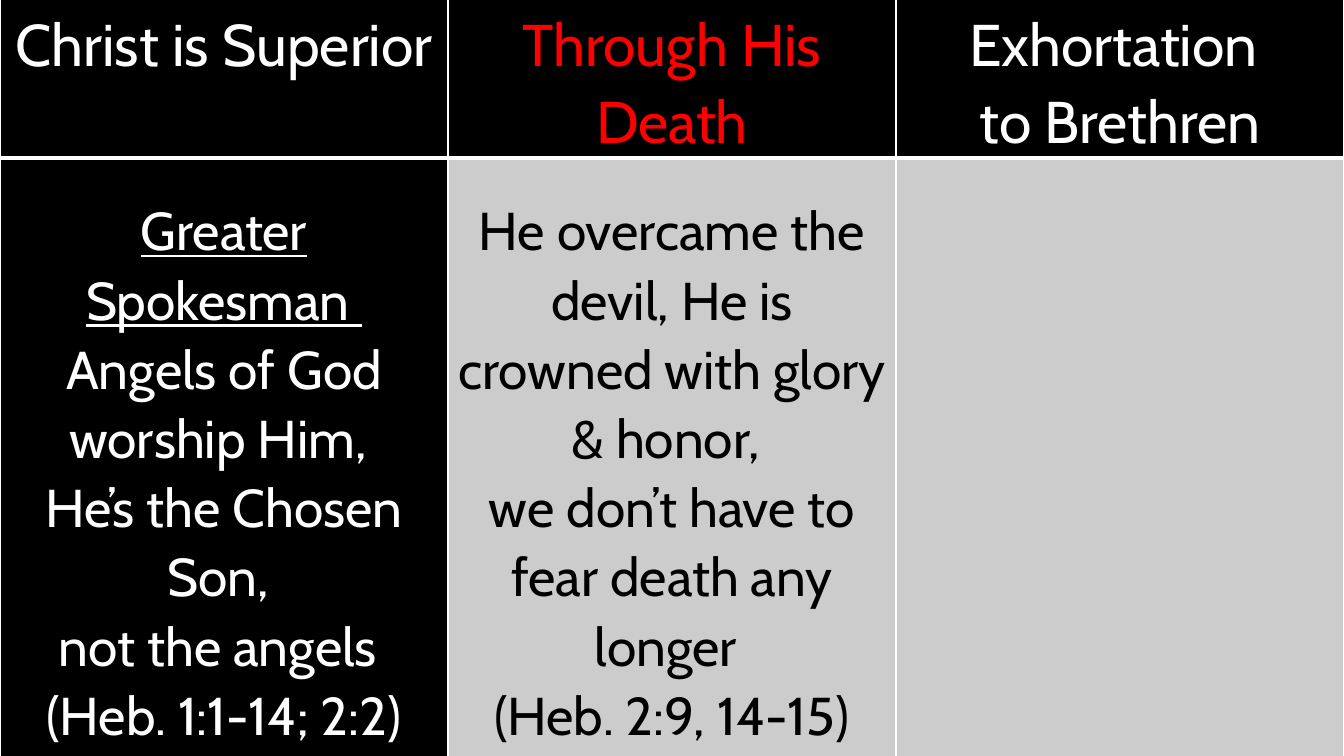
"""Build a three-column table slide on Christ's superiority in Hebrews."""
from lxml.etree import SubElement
from pptx import Presentation
from pptx.dml.color import RGBColor as RGB
from pptx.enum.text import PP_ALIGN as Align
from pptx.oxml.ns import qn
from pptx.util import Pt

BLACK, WHITE, RED, GREY = "000000", "FFFFFF", "FF0000", "CCCCCC"


def paint(fill, color):
    fill.solid()
    fill.fore_color.rgb = RGB.from_string(color)


def edge(cell, side, width):
    line = SubElement(cell._tc.get_or_add_tcPr(), qn("a:ln" + side), w=str(Pt(width)))
    solid = SubElement(line, qn("a:solidFill"))
    SubElement(solid, qn("a:srgbClr"), val=WHITE)


heads = [
    (["Christ is Superior"], WHITE, BLACK),
    (["Through His Death"], RED, BLACK),
    (["Exhortation ", "to Brethren"], WHITE, BLACK),
]
bodies = [
    (["Greater Spokesman ", "Angels of God worship Him, ", "He’s the Chosen Son, ",
      "not the angels ", "(Heb. 1:1-14; 2:2)"], WHITE, BLACK),
    (["He overcame the devil, He is crowned with glory & honor, ",
      "we don’t have to fear death any longer ", "(Heb. 2:9, 14-15)"], BLACK, GREY),
    ([], BLACK, GREY),
]
rows = [
    (heads, 121.5, 42, 15.7, 3),
    (bodies, 451.5, 38, 26.3, 1),
]

deck = Presentation()
deck.slide_width, deck.slide_height = Pt(960), Pt(540)
slide = deck.slides.add_slide(deck.slide_layouts[6])
paint(slide.background.fill, BLACK)

table = slide.shapes.add_table(2, 3, Pt(0), Pt(-12.2), Pt(960), Pt(573)).table
table.first_row = table.horz_banding = False
for col in table.columns:
    col.width = Pt(320)

for r, (cells, height, size, top, base) in enumerate(rows):
    table.rows[r].height = Pt(height)
    for c, (lines, color, back) in enumerate(cells):
        cell = table.cell(r, c)
        cell.margin_left = cell.margin_right = Pt(5)
        cell.margin_top, cell.margin_bottom = Pt(top), Pt(0)
        for side, width in zip("LRTB", (1, 1, 1, base)):
            edge(cell, side, width)
        paint(cell.fill, back)
        frame = cell.text_frame
        for i, line in enumerate(lines):
            para = frame.add_paragraph() if i else frame.paragraphs[0]
            para.text = line
            para.alignment = Align.CENTER
            para.line_spacing = 1.07
            font = para.font
            font.name, font.size = "Cabin", Pt(size)
            font.color.rgb = RGB.from_string(color)

table.cell(1, 0).text_frame.paragraphs[0].font.underline = True

deck.save("out.pptx")
